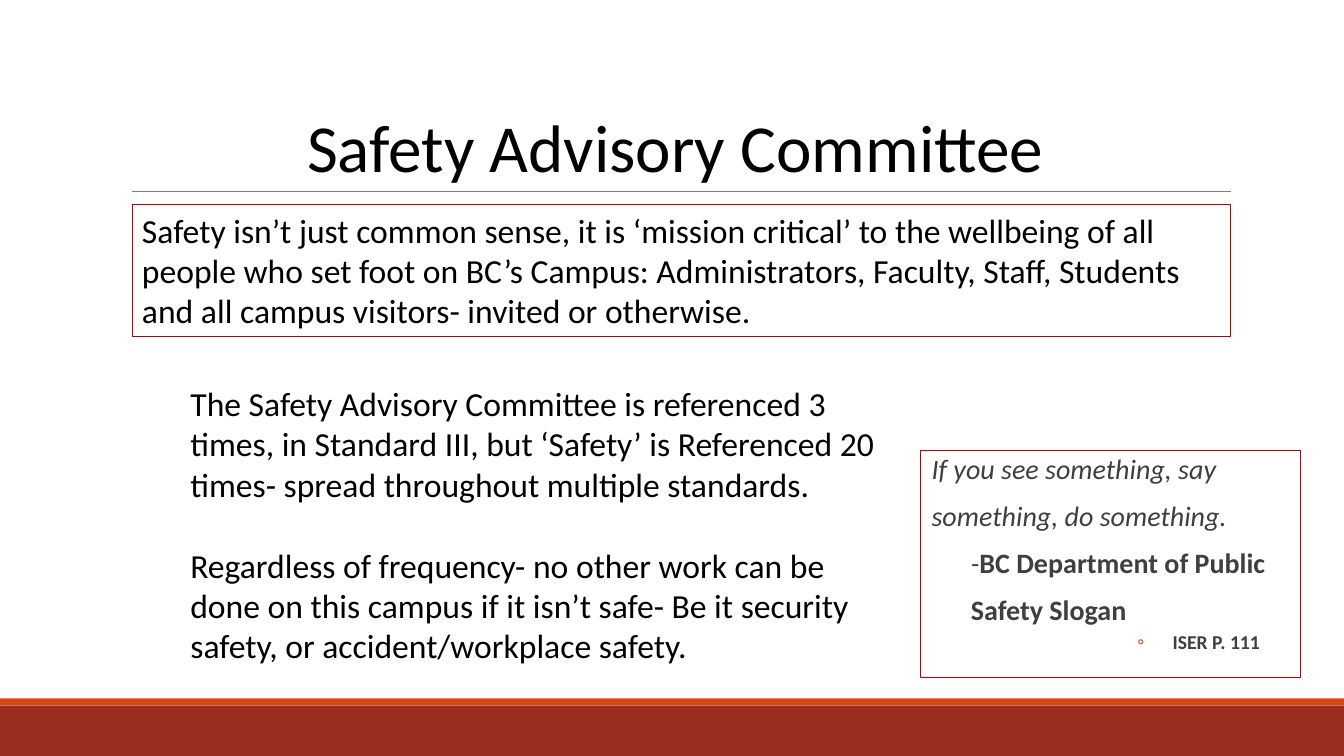
import pptx
import pptx.dml.color
import pptx.enum.shapes
import pptx.enum.text
import pptx.oxml
import pptx.oxml.ns
import pptx.util
from lxml import etree

Inches = pptx.util.Inches
Pt = pptx.util.Pt
RGBColor = pptx.dml.color.RGBColor
PP_ALIGN = pptx.enum.text.PP_ALIGN
MSO_ANCHOR = pptx.enum.text.MSO_ANCHOR
qn = pptx.oxml.ns.qn

BLACK = RGBColor(0x00, 0x00, 0x00)
CHARCOAL = RGBColor(0x3F, 0x3F, 0x3F)
GRAY = RGBColor(0x7F, 0x7F, 0x7F)
RED = RGBColor(0xC0, 0x00, 0x00)
BRICK = RGBColor(0x9B, 0x2D, 0x1F)
ORANGE = RGBColor(0xD3, 0x48, 0x17)


class SlideBuilder:
    """Holds the text style and the slide being filled."""

    font = "Calibri"
    line_width = Pt(0.75)

    def __init__(self, slide):
        self.slide = slide

    def bar(self, top, height, color):
        """Draw a full-width band without an outline."""
        sp = self.slide.shapes.add_shape(
            pptx.enum.shapes.MSO_SHAPE.RECTANGLE,
            0, Inches(top), Inches(13.33), Inches(height))
        sp.shadow.inherit = False
        sp.fill.solid()
        sp.fill.fore_color.rgb = color
        sp.line.fill.background()

    def rule(self, left, right, y, color):
        """Draw a thin horizontal line."""
        line = self.slide.shapes.add_connector(
            pptx.enum.shapes.MSO_CONNECTOR.STRAIGHT,
            Inches(left), Inches(y), Inches(right), Inches(y))
        line.line.color.rgb = color
        line.line.width = self.line_width
        etree.SubElement(line.element.spPr, qn("a:effectLst"))

    def text_box(self, left, top, width, height, border=None, side_inset=0.1,
                 anchor=MSO_ANCHOR.TOP):
        sp = self.slide.shapes.add_textbox(
            Inches(left), Inches(top), Inches(width), Inches(height))
        if border is not None:
            sp.line.color.rgb = border
            sp.line.width = self.line_width
        tf = sp.text_frame
        tf.word_wrap = True
        tf.vertical_anchor = anchor
        tf.margin_left = tf.margin_right = Inches(side_inset)
        tf.margin_top = tf.margin_bottom = Inches(0.05)
        return tf

    def paragraph(self, tf, text, size, color=BLACK, bold=False, italic=False,
                  align=PP_ALIGN.LEFT, spacing=1.0, before=0):
        """Fill the frame's empty first paragraph, or append a new one."""
        p = tf.paragraphs[0] if not tf.text else tf.add_paragraph()
        p.text = text
        p.alignment = align
        p.line_spacing = spacing
        p.space_before = Pt(before)
        self.format_run(p.runs[0], size, color, bold, italic)
        return p

    def format_run(self, r, size, color, bold=False, italic=False):
        r.font.name = self.font
        r.font.size = Pt(size)
        r.font.color.rgb = color
        r.font.bold = bold
        r.font.italic = italic

    def indent(self, p, left, first=0, bullet=None, bullet_color=ORANGE):
        """Set the indents and, if given, a coloured bullet."""
        pPr = p._p.get_or_add_pPr()
        pPr.set("marL", str(Inches(left)))
        pPr.set("indent", str(Inches(first)))
        if bullet:
            bu_clr = etree.SubElement(pPr, qn("a:buClr"))
            etree.SubElement(bu_clr, qn("a:srgbClr"), val=str(bullet_color))
            etree.SubElement(pPr, qn("a:buFont"), typeface=self.font)
            etree.SubElement(pPr, qn("a:buChar"), char=bullet)


def main():
    prs = pptx.Presentation()
    prs.slide_width = Inches(13.33)
    prs.slide_height = Inches(7.5)
    s = SlideBuilder(prs.slides.add_slide(prs.slide_layouts[6]))

    s.bar(7, 0.5, BRICK)
    s.bar(6.93, 0.07, ORANGE)
    s.rule(1.31, 12.21, 1.9, GRAY)

    title = s.text_box(1.2, 0.31, 11, 1.59, anchor=MSO_ANCHOR.BOTTOM)
    s.paragraph(title, "Safety Advisory Committee", 48,
                align=PP_ALIGN.CENTER, spacing=0.85)

    slogan = s.text_box(9.13, 4.47, 3.77, 2.25, border=RED, side_inset=0)
    slogan_style = dict(color=CHARCOAL, spacing=0.9)
    for text in ("If you see something, say", "something, do something."):
        p = s.paragraph(slogan, text, 20, italic=True, before=12, **slogan_style)
        s.indent(p, 0.11)
    p = s.paragraph(slogan, "-", 20, italic=True, before=12, **slogan_style)
    s.indent(p, 0.5)
    r = p.add_run()
    r.text = "BC Department of Public"
    s.format_run(r, 20, CHARCOAL, bold=True)
    p = s.paragraph(slogan, "Safety Slogan", 20, bold=True, before=12, **slogan_style)
    s.indent(p, 0.5)
    p = s.paragraph(slogan, "ISER P. 111", 14, bold=True, before=4, **slogan_style)
    s.indent(p, 2.5, -0.35, bullet="◦")

    mission = s.text_box(1.31, 2.03, 10.89, 1.31, border=RED)
    s.paragraph(mission, "Safety isn’t just common sense, it is ‘mission critical’ to "
                "the wellbeing of all people who set foot on BC’s Campus: "
                "Administrators, Faculty, Staff, Students and all campus "
                "visitors- invited or otherwise.", 24)

    references = s.text_box(1.79, 3.75, 7.1, 2.93)
    s.paragraph(references, "The Safety Advisory Committee is referenced 3 times, in "
                "Standard III, but ‘Safety’ is Referenced 20 times- spread "
                "throughout multiple standards.", 24)
    s.paragraph(references, "Regardless of frequency- no other work can be done on "
                "this campus if it isn’t safe- Be it security safety, or "
                "accident/workplace safety.", 24, before=29)

    prs.save("out.pptx")


if __name__ == "__main__":
    main()
